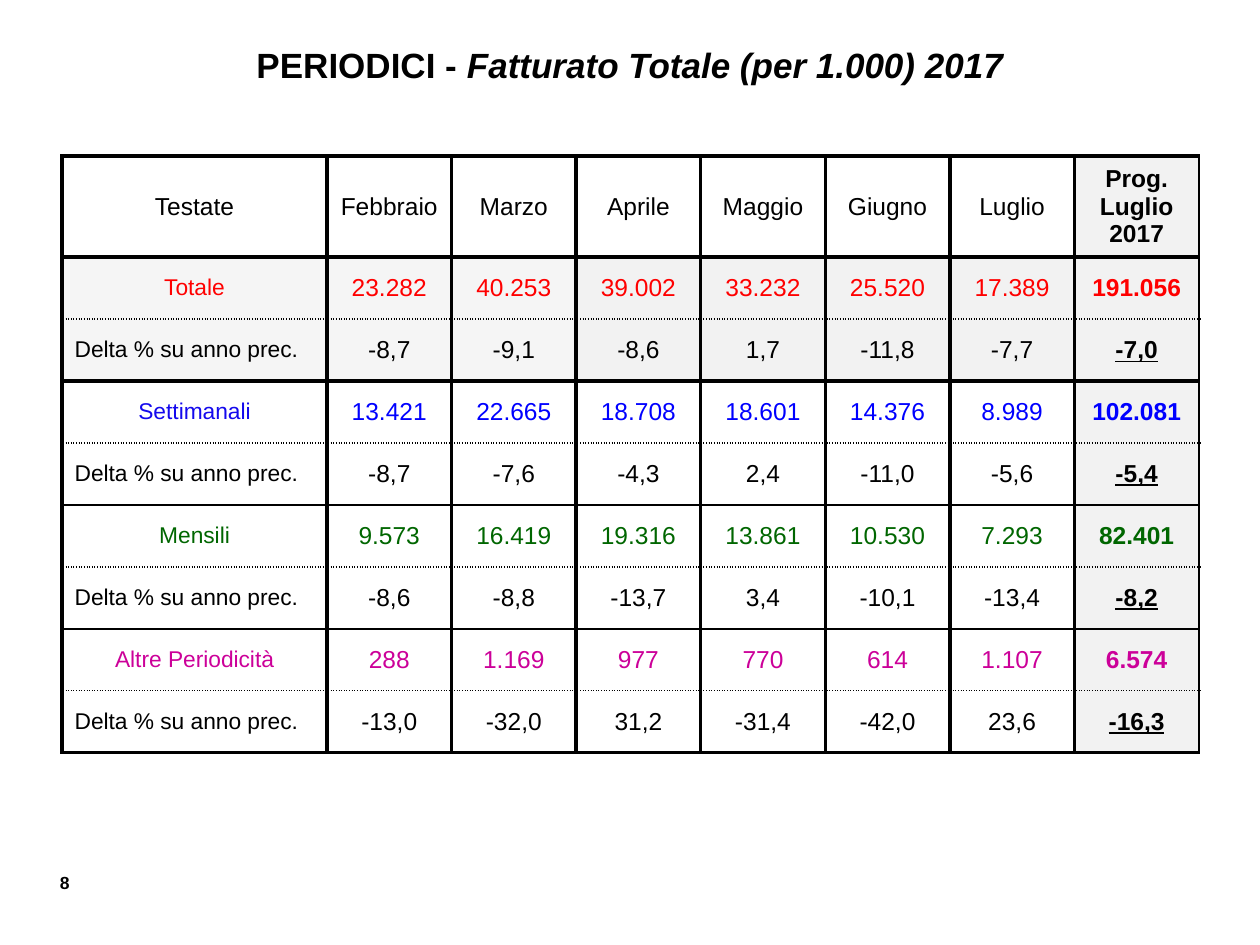
from lxml import etree
from pptx import Presentation
from pptx.dml.color import RGBColor
from pptx.enum.text import MSO_ANCHOR, PP_ALIGN
from pptx.oxml.ns import qn
from pptx.util import Pt

LEFT, CENTER, RIGHT = PP_ALIGN.LEFT, PP_ALIGN.CENTER, PP_ALIGN.RIGHT
MIDDLE = MSO_ANCHOR.MIDDLE
EMU_PER_PX = 914400 / 126

BLACK = RGBColor(0x00, 0x00, 0x00)
RED = RGBColor(0xFF, 0x00, 0x00)
BLUE = RGBColor(0x00, 0x00, 0xFF)
LABEL_BLUE = RGBColor(0x14, 0x09, 0xED)
GREEN = RGBColor(0x00, 0x66, 0x00)
MAGENTA = RGBColor(0xCC, 0x00, 0x99)
GREY = RGBColor(0xF2, 0xF2, 0xF2)
PALE_GREY = RGBColor(0xF5, 0xF5, 0xF5)

THICK, MEDIUM, THIN, DOTTED = (2.25, "solid"), (1.5, "solid"), (1, "solid"), (1, "sysDot")

DELTA = "Delta % su anno prec."
# label, label colour, value colour, values
ROWS = [
    ("Testate", BLACK, BLACK,
     ["Febbraio", "Marzo", "Aprile", "Maggio", "Giugno", "Luglio", "Prog.\vLuglio 2017"]),
    ("Totale", RED, RED,
     ["23.282", "40.253", "39.002", "33.232", "25.520", "17.389", "191.056"]),
    (DELTA, BLACK, BLACK, ["-8,7", "-9,1", "-8,6", "1,7", "-11,8", "-7,7", "-7,0"]),
    ("Settimanali", LABEL_BLUE, BLUE,
     ["13.421", "22.665", "18.708", "18.601", "14.376", "8.989", "102.081"]),
    (DELTA, BLACK, BLACK, ["-8,7", "-7,6", "-4,3", "2,4", "-11,0", "-5,6", "-5,4"]),
    ("Mensili", GREEN, GREEN,
     ["9.573", "16.419", "19.316", "13.861", "10.530", "7.293", "82.401"]),
    (DELTA, BLACK, BLACK, ["-8,6", "-8,8", "-13,7", "3,4", "-10,1", "-13,4", "-8,2"]),
    ("Altre Periodicità", MAGENTA, MAGENTA,
     ["288", "1.169", "977", "770", "614", "1.107", "6.574"]),
    (DELTA, BLACK, BLACK, ["-13,0", "-32,0", "31,2", "-31,4", "-42,0", "23,6", "-16,3"]),
]
ROW_RULES = [THICK, THICK, DOTTED, THICK, DOTTED, MEDIUM, DOTTED, MEDIUM, DOTTED, THICK]
LAST_COLUMN = 7


def px(length):
    return round(length * EMU_PER_PX)


def set_borders(cell, left, right, top, bottom):
    """Draw the four black cell borders, each a (points, dash) pair."""
    properties = cell._tc.get_or_add_tcPr()
    for side, (points, dash) in zip("LRTB", (left, right, top, bottom)):
        line = etree.SubElement(properties, qn(f"a:ln{side}"), w=str(Pt(points)))
        fill = etree.SubElement(line, qn("a:solidFill"))
        etree.SubElement(fill, qn("a:srgbClr"), val=str(BLACK))
        etree.SubElement(line, qn("a:prstDash"), val=dash)


prs = Presentation()
prs.slide_width, prs.slide_height = px(1260), px(945)
slide = prs.slides.add_slide(prs.slide_layouts[5])

title = slide.shapes.title
title.left, title.top, title.width, title.height = px(0), px(37), px(1260), px(55)
title.text_frame.vertical_anchor = MIDDLE
heading = title.text_frame.paragraphs[0]
heading.alignment = CENTER
for text, italic in [("PERIODICI - ", False), ("Fatturato Totale (per 1.000) 2017", True)]:
    run = heading.add_run()
    run.text = text
    run.font.name, run.font.size, run.font.bold = "Arial", Pt(20), True
    run.font.italic = italic
    run.font.color.rgb = BLACK

revenue = slide.shapes.add_table(
    len(ROWS), LAST_COLUMN + 1, px(62), px(156), px(1137), px(597)).table
revenue.first_row = revenue.horz_banding = False
for c, column in enumerate(revenue.columns):
    column.width = px(872) // LAST_COLUMN if c else px(265)
for r, row in enumerate(revenue.rows):
    row.height = px(62) if r else px(101)

for r, (label, label_color, value_color, values) in enumerate(ROWS):
    for c, text in enumerate([label] + values):
        cell = revenue.cell(r, c)
        is_total = c == LAST_COLUMN
        is_delta = label == DELTA
        set_borders(cell, THICK, THIN if is_total else THICK, ROW_RULES[r], ROW_RULES[r + 1])
        if is_total or (r in (1, 2) and c > 2):
            cell.fill.solid()
            cell.fill.fore_color.rgb = GREY
        elif r in (1, 2):
            cell.fill.solid()
            cell.fill.fore_color.rgb = PALE_GREY
        else:
            cell.fill.background()
        cell.vertical_anchor = MIDDLE
        if r and c:
            cell.margin_left = cell.margin_right = cell.margin_top = cell.margin_bottom = 0
        cell.text = text
        paragraph = cell.text_frame.paragraphs[0]
        paragraph.alignment = LEFT if is_delta and c == 0 else CENTER
        font = paragraph.font
        font.name = "Arial"
        font.size = Pt(13 if r and c == 0 else 14)
        font.bold = is_total
        font.underline = is_total and is_delta
        font.color.rgb = value_color if c else label_color

page_number = slide.shapes.add_textbox(px(24), px(866), px(58), px(34)).text_frame
page_number.word_wrap = True
page_number.text = "8"
number = page_number.paragraphs[0]
number.alignment = RIGHT
number.font.name, number.font.size, number.font.bold = "Arial", Pt(10), True
number.font.color.rgb = BLACK

prs.save("out.pptx")
